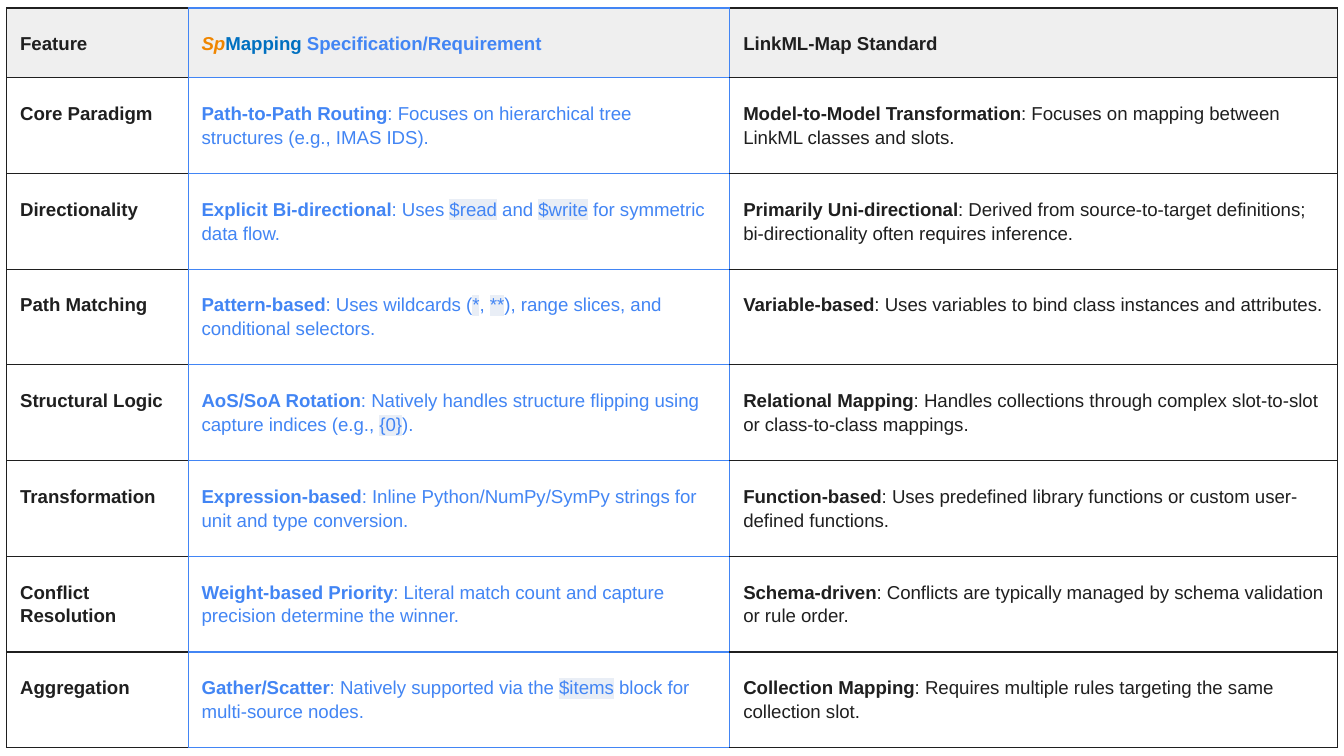
from dataclasses import dataclass

from lxml import etree
from pptx import Presentation
from pptx import util as u
from pptx.dml import color
from pptx.oxml import ns
from pptx.table import _Cell

COLORS = {
    "ink": "1F1F1F",
    "blue": "4285F4",
    "deep": "0070C0",
    "orange": "EF8600",
    "header": "EFEFEF",
    "code": "E9EEF6",
}
WIDTHS = (97.2, 290.2, 325.4)
HEADER_HEIGHT, ROW_HEIGHT = 36.9, 51.3


@dataclass(frozen=True)
class Span:
    words: str
    color: str = "ink"
    bold: bool = False
    italic: bool = False
    code: bool = False


@dataclass(frozen=True)
class Column:
    color: str
    borders: dict[str, str]
    right_margin: float


@dataclass(frozen=True)
class Comparison:
    feature: str
    mapping: tuple[str, str]
    standard: tuple[str, str]


INK_SIDES = {"L": "ink", "R": "ink", "T": "ink", "B": "ink"}
COLUMNS = (
    Column("ink", INK_SIDES | {"R": "blue"}, 8.64),
    Column("blue", dict.fromkeys("LRTB", "blue"), 8.64),
    Column("ink", INK_SIDES | {"L": "blue"}, 7.2),
)
HEADERS = (
    [Span("Feature", bold=True)],
    [
        Span("Sp", "orange", bold=True, italic=True),
        Span("Mapping ", "deep", bold=True),
        Span("Specification/Requirement", "blue", bold=True),
    ],
    [Span("LinkML-Map Standard", bold=True)],
)
COMPARISONS = (
    Comparison(
        "Core Paradigm",
        ("Path-to-Path Routing", ": Focuses on hierarchical tree structures (e.g., IMAS IDS)."),
        ("Model-to-Model Transformation", ": Focuses on mapping between LinkML classes and slots."),
    ),
    Comparison(
        "Directionality",
        ("Explicit Bi-directional", ": Uses `$read` and `$write` for symmetric data flow."),
        ("Primarily Uni-directional", ": Derived from source-to-target definitions; "
         "bi-directionality often requires inference."),
    ),
    Comparison(
        "Path Matching",
        ("Pattern-based", ": Uses wildcards (`*`, `**`), range slices, and conditional selectors."),
        ("Variable-based", ": Uses variables to bind class instances and attributes."),
    ),
    Comparison(
        "Structural Logic",
        ("AoS/SoA Rotation", ": Natively handles structure flipping using capture indices (e.g., `{0}`)."),
        ("Relational Mapping", ": Handles collections through complex slot-to-slot or class-to-class mappings."),
    ),
    Comparison(
        "Transformation",
        ("Expression-based", ": Inline Python/NumPy/SymPy strings for unit and type conversion."),
        ("Function-based", ": Uses predefined library functions or custom user-defined functions."),
    ),
    Comparison(
        "Conflict Resolution",
        ("Weight-based Priority", ": Literal match count and capture precision determine the winner."),
        ("Schema-driven", ": Conflicts are typically managed by schema validation or rule order."),
    ),
    Comparison(
        "Aggregation",
        ("Gather/Scatter", ": Natively supported via the `$items` block for multi-source nodes."),
        ("Collection Mapping", ": Requires multiple rules targeting the same collection slot."),
    ),
)


def describe(title: str, detail: str, ink: str) -> list[Span]:
    """Split a bold title and a detail with backticked code into spans."""
    pieces = enumerate(detail.split("`"))
    return [Span(title, ink, bold=True)] + [
        Span(piece, ink, code=index % 2 == 1) for index, piece in pieces if piece
    ]


def add_color(parent: etree._Element, name: str) -> None:
    """Append an RGB colour element."""
    etree.SubElement(parent, ns.qn("a:srgbClr"), val=COLORS[name])


def draw_borders(cell: _Cell, borders: dict[str, str]) -> None:
    """Put a line on each side of a cell, ahead of its fill."""
    properties = cell._tc.get_or_add_tcPr()
    for index, (side, name) in enumerate((side, borders[side]) for side in "LRTB"):
        line = etree.Element(ns.qn(f"a:ln{side}"), w=str(u.Pt(0.75)))
        add_color(etree.SubElement(line, ns.qn("a:solidFill")), name)
        properties.insert(index, line)


def write_spans(cell: _Cell, spans: list[Span]) -> None:
    """Write formatted spans into the paragraph of a cell."""
    para = cell.text_frame.paragraphs[0]
    para.line_spacing = 1.15
    for span in spans:
        run = para.add_run()
        run.text = span.words
        formats = {"name": "Arial", "size": u.Pt(10), "bold": span.bold, "italic": span.italic}
        for key, value in formats.items():
            setattr(run.font, key, value)
        run.font.color.rgb = color.RGBColor.from_string(COLORS[span.color])
        if span.code:
            highlight = etree.Element(ns.qn("a:highlight"))
            add_color(highlight, "code")
            run.font._element.find(ns.qn("a:solidFill")).addnext(highlight)


def draw_cell(cell: _Cell, column: Column, spans: list[Span], header: bool) -> None:
    """Give a cell its margins, fill, borders and words."""
    margins = {
        "margin_left": 7.2,
        "margin_top": 12.24,
        "margin_right": column.right_margin,
        "margin_bottom": 12.24,
    }
    for key, value in margins.items():
        setattr(cell, key, u.Pt(value))
    if header:
        cell.fill.solid()
        cell.fill.fore_color.rgb = color.RGBColor.from_string(COLORS["header"])
    else:
        cell.fill.background()
    draw_borders(cell, column.borders)
    write_spans(cell, spans)


def main() -> None:
    """Build the comparison table page."""
    deck = Presentation()
    deck.slide_width, deck.slide_height = u.Pt(720), u.Pt(405)
    page = deck.slides.add_slide(deck.slide_layouts[6])
    rows = [HEADERS] + [
        (
            [Span(item.feature, bold=True)],
            describe(*item.mapping, COLUMNS[1].color),
            describe(*item.standard, COLUMNS[2].color),
        )
        for item in COMPARISONS
    ]
    heights = [HEADER_HEIGHT] + [ROW_HEIGHT] * len(COMPARISONS)
    frame = page.shapes.add_table(
        len(rows), len(COLUMNS), u.Pt(3.6), u.Pt(4.3), u.Pt(sum(WIDTHS)), u.Pt(sum(heights))
    )
    table = frame.table
    table.first_row = table.horz_banding = False
    for table_column, width in zip(table.columns, WIDTHS):
        table_column.width = u.Pt(width)
    for index, (cells, height) in enumerate(zip(rows, heights)):
        table.rows[index].height = u.Pt(height)
        for position, (column, spans) in enumerate(zip(COLUMNS, cells)):
            draw_cell(table.cell(index, position), column, spans, header=index == 0)
    deck.save("out.pptx")


if __name__ == "__main__":
    main()
